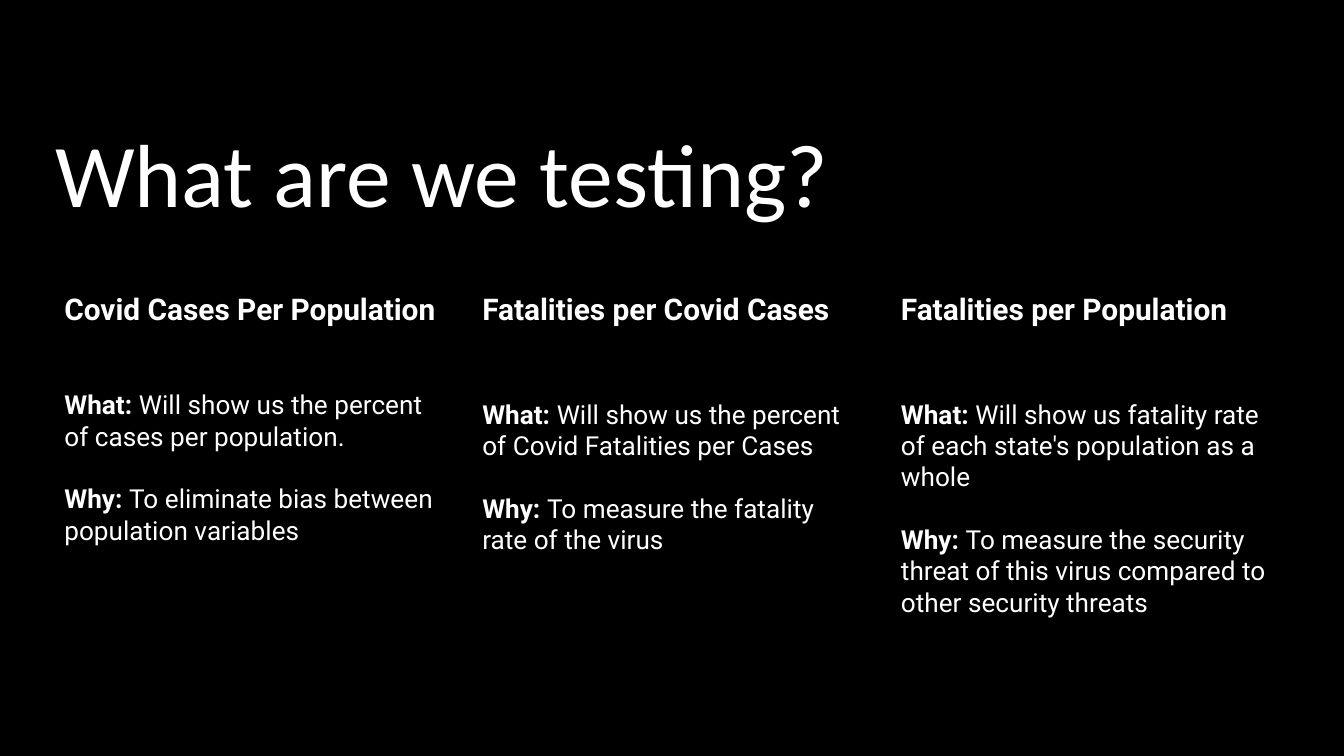
from pptx import Presentation
from pptx.dml.color import RGBColor
from pptx.enum import shapes, text
from pptx.util import Pt

BLACK = RGBColor(0x00, 0x00, 0x00)
WHITE = RGBColor(0xFF, 0xFF, 0xFF)

COLUMN_TOP, COLUMN_HEIGHT = 148.3, 245.5
BLANK_LINE = 16.8

# left, width, gap below the heading, heading, what, why
COLUMNS = [
    (27.4, 219.6, 33.5, "Covid Cases Per Population",
     "Will show us the percent of cases per population.",
     "To eliminate bias between population variables"),
    (251.3, 219.6, 38.5, "Fatalities per Covid Cases",
     "Will show us the percent of Covid Fatalities per Cases",
     "To measure the fatality rate of the virus"),
    (475.6, 213.1, 38.5, "Fatalities per Population",
     "Will show us fatality rate of each state's population as a whole",
     "To measure the security threat of this virus compared to other security threats"),
]


def add_span(para, words, *, size, font="Roboto", bold=False, color=WHITE):
    span = para.add_run()
    span.text = words
    span.font.size = Pt(size)
    span.font.name = font
    span.font.bold = bold
    span.font.color.rgb = color


class SlideBuilder:
    def __init__(self, slide, font="Roboto", heading_size=16, body_size=14):
        self.slide = slide
        self.font = font
        self.heading_size = heading_size
        self.body_size = body_size

    def background(self, color):
        fill = self.slide.background.fill
        fill.solid()
        fill.fore_color.rgb = color

    def prepare_frame(self, box):
        """Set wrapping, top anchor and equal insets; return the text frame."""
        frame = box.text_frame
        frame.word_wrap = True
        frame.auto_size = text.MSO_AUTO_SIZE.NONE
        frame.vertical_anchor = text.MSO_ANCHOR.TOP
        frame.margin_left = frame.margin_right = Pt(7.2)
        frame.margin_top = frame.margin_bottom = Pt(7.2)
        return frame

    def title(self, words, left, top, width, height):
        box = self.slide.shapes.title
        box.left, box.top, box.width, box.height = map(Pt, (left, top, width, height))
        para = self.prepare_frame(box).paragraphs[0]
        para.alignment = text.PP_ALIGN.LEFT
        add_span(para, words, size=48, font="Calibri")

    def column(self, left, width, heading_gap, heading, what, why):
        box = self.slide.shapes.add_shape(
            shapes.MSO_SHAPE.RECTANGLE,
            Pt(left), Pt(COLUMN_TOP), Pt(width), Pt(COLUMN_HEIGHT))
        box.shadow.inherit = False
        box.fill.background()
        box.line.color.rgb = BLACK
        box.line.width = Pt(1.5)
        frame = self.prepare_frame(box)
        para = frame.paragraphs[0]
        para.alignment = text.PP_ALIGN.LEFT
        add_span(para, heading, size=self.heading_size, font=self.font, bold=True)
        for label, words, gap in (("What: ", what, heading_gap),
                                  ("Why: ", why, BLANK_LINE)):
            para = frame.add_paragraph()
            para.alignment = text.PP_ALIGN.LEFT
            para.space_before = Pt(gap)
            add_span(para, label, size=self.body_size, font=self.font, bold=True)
            add_span(para, words, size=self.body_size, font=self.font)


def main():
    deck = Presentation()
    deck.slide_width, deck.slide_height = Pt(720), Pt(405)
    page = SlideBuilder(deck.slides.add_slide(deck.slide_layouts[5]))
    page.background(BLACK)
    page.title("What are we testing?", 22.3, 56.2, 679.7, 92.2)
    for column in COLUMNS:
        page.column(*column)
    deck.save("out.pptx")


if __name__ == "__main__":
    main()
